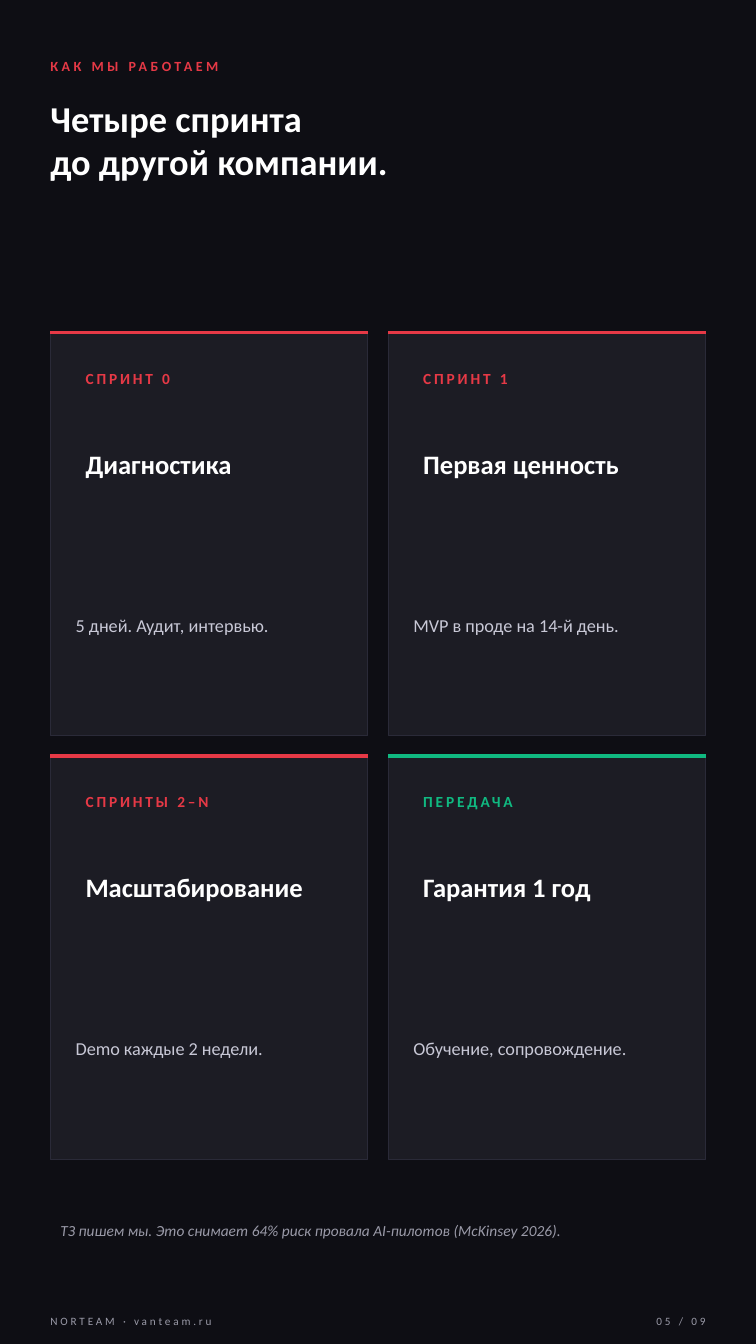
"""Build the slide that presents four sprints as a grid of cards."""
from dataclasses import dataclass

from lxml.etree import SubElement
from pptx import Presentation
from pptx.dml.color import RGBColor
from pptx.enum.shapes import MSO_CONNECTOR as Connector, MSO_SHAPE as Shape
from pptx.enum.text import MSO_ANCHOR as Anchor, PP_ALIGN as Align
from pptx.oxml.ns import qn
from pptx.slide import Slide
from pptx.util import Pt

NIGHT = RGBColor(0x0E, 0x0E, 0x14)
PANEL = RGBColor(0x1C, 0x1C, 0x24)
BORDER = RGBColor(0x2A, 0x2A, 0x38)
RED = RGBColor(0xE6, 0x39, 0x46)
GREEN = RGBColor(0x10, 0xB9, 0x81)
WHITE = RGBColor(0xFF, 0xFF, 0xFF)
SILVER = RGBColor(0xC8, 0xC8, 0xD6)
GREY = RGBColor(0x9A, 0x9A, 0xA8)

FONT = "Calibri"
MARGIN = 36
CARD_WIDTH, CARD_HEIGHT = 226.8, 288
CARDS_TOP = 237.6
GAP = 14.4
PADDING = 18
COLUMNS = 2
FOOTER_TOP, FOOTER_HEIGHT = 934.56, 18


@dataclass(frozen=True)
class Area:
    left: float
    top: float
    width: float
    height: float


@dataclass(frozen=True)
class Style:
    size: float
    color: RGBColor
    bold: bool = False
    italic: bool = False
    tracking: float = 0
    inset: bool = False
    anchor: Anchor = Anchor.MIDDLE
    align: Align = Align.LEFT
    space_after: float = 0


@dataclass(frozen=True)
class Card:
    label: str
    heading: str
    detail: str
    accent: RGBColor = RED


CARDS = [
    Card("СПРИНТ 0", "Диагностика", "5 дней. Аудит, интервью."),
    Card("СПРИНТ 1", "Первая ценность", "MVP в проде на 14-й день."),
    Card("СПРИНТЫ 2–N", "Масштабирование", "Demo каждые 2 недели."),
    Card("ПЕРЕДАЧА", "Гарантия 1 год", "Обучение, сопровождение.", GREEN),
]


def add_text(page: Slide, area: Area, text: str, style: Style) -> None:
    """Add a text box whose lines are parted by line breaks."""
    box = page.shapes.add_textbox(
        Pt(area.left), Pt(area.top), Pt(area.width), Pt(area.height))
    frame = box.text_frame
    frame.word_wrap = True
    frame.vertical_anchor = style.anchor
    if not style.inset:
        frame.margin_left = frame.margin_right = Pt(0)
        frame.margin_top = frame.margin_bottom = Pt(0)
    para = frame.paragraphs[0]
    para.alignment = style.align
    if style.space_after:
        para.space_after = Pt(style.space_after)
    for index, line in enumerate(text.split("\n")):
        if index:
            para.add_line_break()
        span = para.add_run()
        span.text = line
        font = span.font
        font.name, font.size = FONT, Pt(style.size)
        font.bold, font.italic = style.bold, style.italic
        font.color.rgb = style.color
        if style.tracking:
            span._r.get_or_add_rPr().set("spc", str(int(style.tracking * 100)))


def add_card(page: Slide, card: Card, left: float, top: float) -> None:
    """Add a panel with an accent rule on top and three texts."""
    panel = page.shapes.add_shape(
        Shape.RECTANGLE, Pt(left), Pt(top), Pt(CARD_WIDTH), Pt(CARD_HEIGHT))
    panel.shadow.inherit = False
    panel.fill.solid()
    panel.fill.fore_color.rgb = PANEL
    panel.line.color.rgb = BORDER
    panel.line.width = Pt(0.75)

    rule = page.shapes.add_connector(
        Connector.STRAIGHT, Pt(left), Pt(top), Pt(left + CARD_WIDTH), Pt(top))
    rule.line.color.rgb = card.accent
    rule.line.width = Pt(2.5)
    SubElement(rule._element.spPr, qn("a:effectLst"))

    rows = [
        (21.6, 21.6, card.label,
         Style(11, card.accent, bold=True, tracking=2, inset=True)),
        (54, 79.2, card.heading, Style(19, WHITE, bold=True, inset=True)),
        (140.4, 136.8, card.detail, Style(13, SILVER)),
    ]
    for offset, height, text, style in rows:
        area = Area(left + PADDING, top + offset, CARD_WIDTH - 2 * PADDING, height)
        add_text(page, area, text, style)


def main() -> None:
    """Build and save the deck."""
    deck = Presentation()
    deck.slide_width, deck.slide_height = Pt(540), Pt(959.76)
    page = deck.slides.add_slide(deck.slide_layouts[6])
    page.background.fill.solid()
    page.background.fill.fore_color.rgb = NIGHT

    add_text(page, Area(MARGIN, 36, 453.6, 21.6), "КАК МЫ РАБОТАЕМ",
             Style(10, RED, bold=True, tracking=2.5))
    add_text(page, Area(MARGIN, 68.4, 468, 115.2),
             "Четыре спринта\nдо другой компании.",
             Style(26, WHITE, bold=True, anchor=Anchor.TOP, space_after=4))

    for index, card in enumerate(CARDS):
        row, column = divmod(index, COLUMNS)
        add_card(page, card, MARGIN + column * (CARD_WIDTH + GAP),
                 CARDS_TOP + row * (CARD_HEIGHT + GAP))

    add_text(page, Area(MARGIN, 864, 468, 28.8),
             "ТЗ пишем мы. Это снимает 64% риск провала AI-пилотов (McKinsey 2026).",
             Style(11, GREY, italic=True, inset=True))
    add_text(page, Area(MARGIN, FOOTER_TOP, 324, FOOTER_HEIGHT),
             "NORTEAM · vanteam.ru", Style(8, GREY, tracking=2))
    add_text(page, Area(424.8, FOOTER_TOP, 79.2, FOOTER_HEIGHT), "05 / 09",
             Style(8, GREY, tracking=2, align=Align.RIGHT))
    deck.save("out.pptx")


if __name__ == "__main__":
    main()
